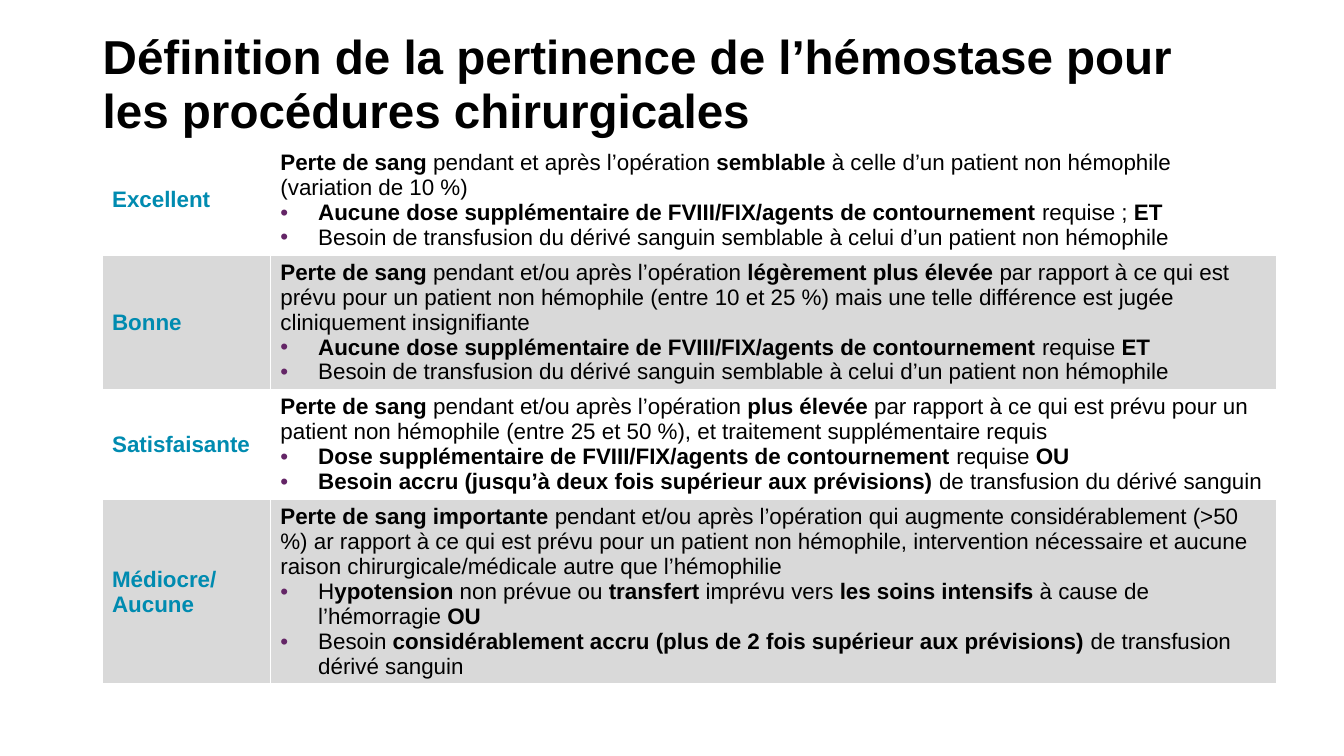
from dataclasses import dataclass

from lxml.etree import SubElement
from pptx import Presentation
from pptx.dml.color import RGBColor as Color
from pptx.enum.text import MSO_ANCHOR as Anchor, MSO_AUTO_SIZE as AutoSize, PP_ALIGN as Align
from pptx.oxml.ns import qn
from pptx.util import Pt


@dataclass(frozen=True)
class Theme:
    """Colours, font and type sizes of the slide."""
    font: str = "Arial"
    title_size: int = 34
    body_size: int = 16
    text: str = "000000"
    label: str = "008BB0"
    bullet: str = "642566"
    bands: tuple = ("FFFFFF", "D9D9D9")


THEME = Theme()
TITLE = "Définition de la pertinence de l’hémostase pour les procédures chirurgicales"
COLUMN_WIDTHS = (120.2, 718.6)
BULLET_INDENT = Pt(27)
SAME_TRANSFUSION = "Besoin de transfusion du dérivé sanguin semblable à celui d’un patient non hémophile"

# Bold passages are enclosed in double asterisks; each row is height, label, definition, criteria.
RATINGS = (
    (78.6, "Excellent",
     "**Perte de sang **pendant et après l’opération **semblable** à celle d’un patient "
     "non hémophile (variation de 10 %)",
     ("**Aucune dose supplémentaire de FVIII/FIX/agents de contournement **requise ; **ET**",
      SAME_TRANSFUSION)),
    (95.7, "Bonne",
     "**Perte de sang **pendant et/ou après l’opération **légèrement plus élevée** par rapport "
     "à ce qui est prévu pour un patient non hémophile (entre 10 et 25 %) mais une telle "
     "différence est jugée cliniquement insignifiante",
     ("**Aucune dose supplémentaire de FVIII/FIX/agents de contournement **requise **ET**",
      SAME_TRANSFUSION)),
    (78.6, "Satisfaisante",
     "**Perte de sang **pendant et/ou après l’opération **plus élevée** par rapport à ce qui "
     "est prévu pour un patient non hémophile (entre 25 et 50 %), et traitement "
     "supplémentaire requis",
     ("**Dose supplémentaire de FVIII/FIX/agents de contournement **requise **OU**",
      "**Besoin accru (jusqu’à deux fois supérieur aux prévisions) **de transfusion du "
      "dérivé sanguin")),
    (131.4, "Médiocre/\nAucune",
     "**Perte de sang importante **pendant et/ou après l’opération qui augmente "
     "considérablement (>50 %) ar rapport à ce qui est prévu pour un patient non hémophile, "
     "intervention nécessaire et aucune raison chirurgicale/médicale autre que l’hémophilie",
     ("H**ypotension** non prévue ou **transfert** imprévu vers **les soins intensifs **"
      "à cause de l’hémorragie **OU**",
      "Besoin** considérablement accru (plus de 2 fois supérieur aux prévisions) **"
      "de transfusion dérivé sanguin")),
)


def style_font(paragraph, size, color, bold=None):
    """Set the font shared by all runs of a paragraph."""
    font = paragraph.font
    font.name, font.size, font.bold = THEME.font, Pt(size), bold
    font.color.rgb = Color.from_string(color)


def add_bullet(paragraph):
    """Give a paragraph a coloured bullet with a hanging indent."""
    properties = paragraph._p.get_or_add_pPr()
    properties.set("marL", str(BULLET_INDENT))
    properties.set("indent", str(-BULLET_INDENT))
    color = SubElement(properties, qn("a:buClr"))
    SubElement(color, qn("a:srgbClr"), val=THEME.bullet)
    SubElement(properties, qn("a:buFont"), typeface=THEME.font)
    SubElement(properties, qn("a:buChar"), char="•")


def write_marked(paragraph, text):
    """Write text whose bold passages stand between double asterisks."""
    for index, part in enumerate(text.split("**")):
        if part:
            run = paragraph.add_run()
            run.text = part
            run.font.bold = index % 2 == 1
    style_font(paragraph, THEME.body_size, THEME.text)


def fill_label(cell, label):
    """Write the name of a rating in a cell."""
    cell.vertical_anchor = Anchor.MIDDLE
    cell.text = label
    for paragraph in cell.text_frame.paragraphs:
        style_font(paragraph, THEME.body_size, THEME.label, True)


def fill_definition(cell, definition, criteria):
    """Write a definition followed by its bulleted criteria."""
    frame = cell.text_frame
    write_marked(frame.paragraphs[0], definition)
    for criterion in criteria:
        paragraph = frame.add_paragraph()
        add_bullet(paragraph)
        write_marked(paragraph, criterion)


def set_title(slide):
    """Place and format the slide title."""
    title = slide.shapes.title
    title.left, title.top, title.width, title.height = Pt(66.2), Pt(18), Pt(828), Pt(85.7)
    frame = title.text_frame
    frame.text = TITLE
    frame.word_wrap = True
    frame.auto_size = AutoSize.NONE
    frame.vertical_anchor = Anchor.MIDDLE
    paragraph = frame.paragraphs[0]
    paragraph.alignment = Align.LEFT
    paragraph.line_spacing = 0.95
    style_font(paragraph, THEME.title_size, THEME.text, True)


def add_ratings(slide):
    """Add the table of ratings with alternating row fills."""
    table = slide.shapes.add_table(
        len(RATINGS), len(COLUMN_WIDTHS), Pt(72.9), Pt(103.7),
        Pt(sum(COLUMN_WIDTHS)), Pt(sum(rating[0] for rating in RATINGS))).table
    table.first_row = table.horz_banding = False
    for column, width in zip(table.columns, COLUMN_WIDTHS):
        column.width = Pt(width)
    for index, (height, label, definition, criteria) in enumerate(RATINGS):
        table.rows[index].height = Pt(height)
        label_cell, definition_cell = table.rows[index].cells
        fill_label(label_cell, label)
        fill_definition(definition_cell, definition, criteria)
        for cell in (label_cell, definition_cell):
            cell.fill.solid()
            cell.fill.fore_color.rgb = Color.from_string(THEME.bands[index % 2])


def main():
    """Build and save the presentation."""
    presentation = Presentation()
    presentation.slide_width, presentation.slide_height = Pt(960), Pt(540)
    slide = presentation.slides.add_slide(presentation.slide_layouts[5])
    set_title(slide)
    add_ratings(slide)
    presentation.save("out.pptx")


if __name__ == "__main__":
    main()
